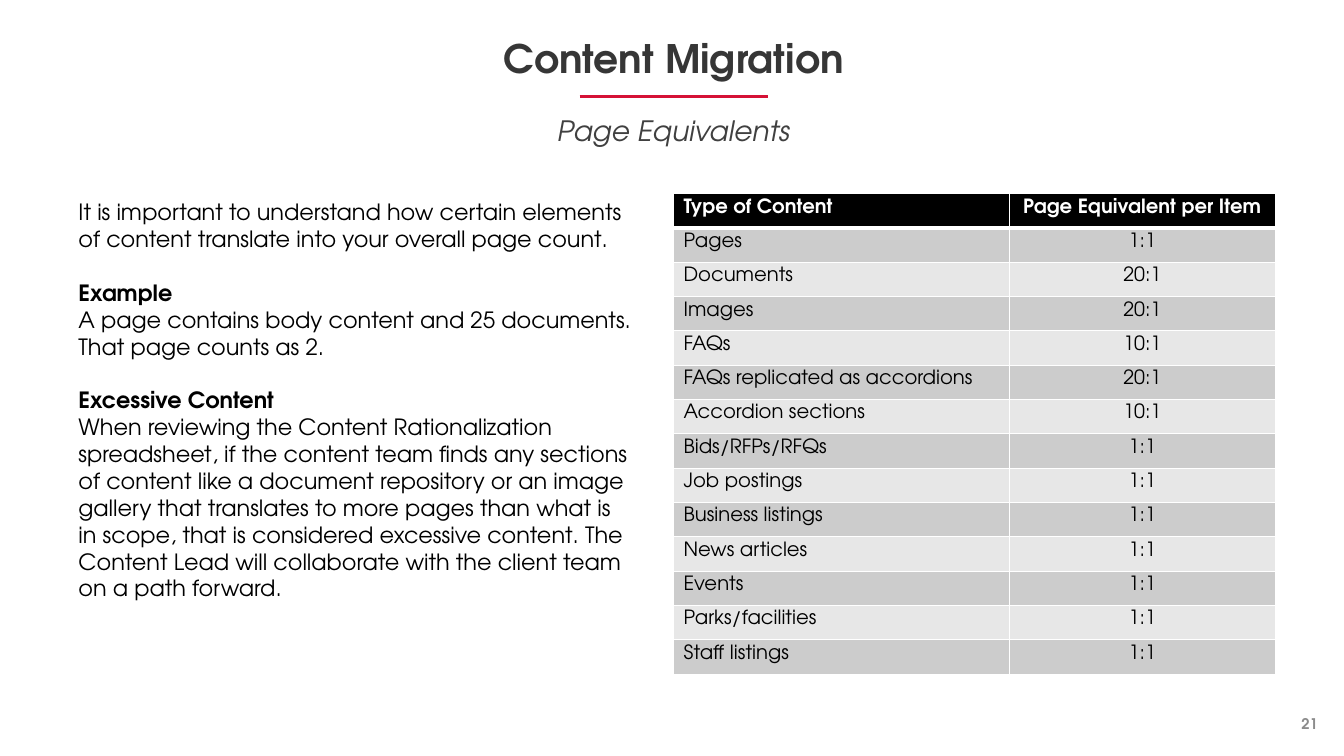
from lxml import etree
from pptx import Presentation, util as u
from pptx.dml.color import RGBColor
from pptx.enum import shapes, text
from pptx.oxml.ns import qn

PX = 9144  # one px is a hundredth of an inch
FONT = "TeX Gyre Adventor"
HUES = {"title": "363636", "sub": "404040", "red": "D51236", "num": "8C8C8C",
        "black": "000000", "white": "FFFFFF", "dark": "CCCCCC", "light": "E7E7E7"}
LEFT, MID, RIGHT = text.PP_ALIGN.LEFT, text.PP_ALIGN.CENTER, text.PP_ALIGN.RIGHT
TOP, LOW = text.MSO_ANCHOR.TOP, text.MSO_ANCHOR.BOTTOM

NOTES = [
    (None, ["It is important to understand how certain elements of content translate "
            "into your overall page count."]),
    ("Example", ["A page contains body content and 25 documents. That page counts as 2."]),
    ("Excessive Content", [
        "When reviewing the Content Rationalization spreadsheet, if the content team finds "
        "any sections of content like a document repository or an image gallery that "
        "translates to more pages than what is in scope, that is considered excessive "
        "content. The Content Lead will collaborate with the client team on a path forward."]),
]
ROWS = [
    ("Type of Content", "Page Equivalent per Item"),
    ("Pages", "1:1"), ("Documents", "20:1"), ("Images", "20:1"), ("FAQs", "10:1"),
    ("FAQs replicated as accordions", "20:1"), ("Accordion sections", "10:1"),
    ("Bids/RFPs/RFQs", "1:1"), ("Job postings", "1:1"), ("Business listings", "1:1"),
    ("News articles", "1:1"), ("Events", "1:1"), ("Parks/facilities", "1:1"),
    ("Staff listings", "1:1"),
]


def px(*nums):
    return [u.Emu(n * PX) for n in nums]


def hue(name):
    return RGBColor.from_string(HUES[name])


def add_run(para, words, size, color, bold=False, italic=False, align=LEFT):
    para.alignment = align
    run = para.add_run()
    run.text = words
    font = run.font
    font.name, font.size, font.bold, font.italic = FONT, u.Pt(size), bold, italic
    font.color.rgb = hue(color)


def set_frame(frame, side=10, edge=5, anchor=TOP):
    frame.word_wrap = True
    frame.auto_size = text.MSO_AUTO_SIZE.NONE
    frame.vertical_anchor = anchor
    frame.margin_left, frame.margin_right = px(side, side)
    frame.margin_top, frame.margin_bottom = px(edge, edge)
    return frame


def add_box(slide, box, **opts):
    return set_frame(slide.shapes.add_textbox(*px(*box)).text_frame, **opts)


def add_head(slide, box):
    x, y, w, h = box
    # Title
    title = slide.shapes.title
    title.left, title.top, title.width, title.height = px(x, y, w, 57)
    frame = set_frame(title.text_frame, side=0, anchor=LOW)
    add_run(frame.paragraphs[0], "Content Migration", 28, "title", bold=True, align=MID)
    # Red rule
    mid, rule = x + w // 2, y + 67
    line = slide.shapes.add_connector(
        shapes.MSO_CONNECTOR.STRAIGHT, *px(mid - 93, rule, mid + 94, rule))
    line.line.color.rgb = hue("red")
    line.line.width = u.Pt(2.25)
    etree.SubElement(line._element.spPr, qn("a:effectLst"))
    # Subtitle
    frame = add_box(slide, (x, y + h - 44, w, 44), side=0)
    add_run(frame.paragraphs[0], "Page Equivalents", 20, "sub", italic=True, align=MID)


def add_notes(slide, box):
    frame = add_box(slide, box)
    para = frame.paragraphs[0]
    for i, (head, body) in enumerate(NOTES):
        lines = [(head, True)] if head else []
        lines += [(words, False) for words in body]
        for j, (words, bold) in enumerate(lines):
            if i or j:
                para = frame.add_paragraph()
            if i and not j:
                para.space_before = u.Pt(19.2)
            add_run(para, words, 16, "black", bold=bold)


def add_edges(cell, row):
    props = cell._tc.get_or_add_tcPr()
    for side in "LRTB":
        thick = (row, side) in ((0, "B"), (1, "T"))
        edge = etree.SubElement(props, qn(f"a:ln{side}"), w=str(u.Pt(3 if thick else 1)))
        fill = etree.SubElement(edge, qn("a:solidFill"))
        etree.SubElement(fill, qn("a:srgbClr"), val=HUES["white"])


def add_grid(slide, box):
    x, y, w, h = box
    table = slide.shapes.add_table(len(ROWS), 2, *px(x, y, w, h)).table
    for col, wide in zip(table.columns, px(333, w - 333)):
        col.width = wide
    for r, row in enumerate(ROWS):
        table.rows[r].height = u.Emu(h * PX // len(ROWS))
        back = ("dark" if r % 2 else "light") if r else "black"
        for c, words in enumerate(row):
            cell = table.cell(r, c)
            add_edges(cell, r)
            cell.fill.solid()
            cell.fill.fore_color.rgb = hue(back)
            add_run(cell.text_frame.paragraphs[0], words, 14, "black" if r else "white",
                    bold=not r, align=MID if c else LEFT)


def add_num(slide, box):
    frame = add_box(slide, box, side=5, edge=3, anchor=text.MSO_ANCHOR.MIDDLE)
    add_run(frame.paragraphs[0], "21", 10.5, "num", bold=True, align=RIGHT)


def main():
    deck = Presentation()
    deck.slide_width, deck.slide_height = px(1333, 750)
    slide = deck.slides.add_slide(deck.slide_layouts.get_by_name("Title Only"))
    add_head(slide, (68, 29, 1200, 123))
    add_notes(slide, (68, 192, 569, 414))
    add_grid(slide, (668, 192, 597, 477))
    add_num(slide, (1260, 708, 52, 20))
    deck.save("out.pptx")


if __name__ == "__main__":
    main()
